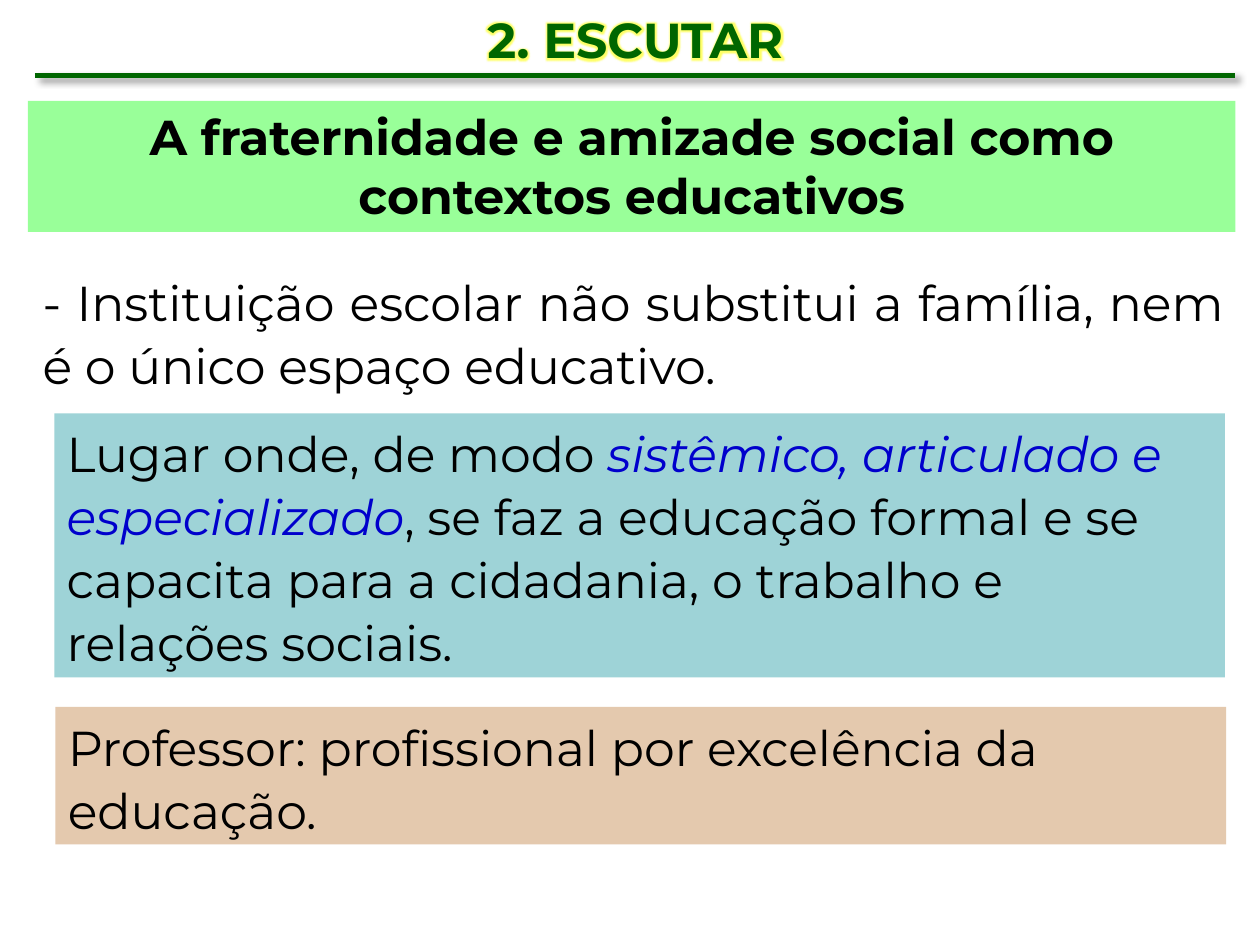
from lxml.etree import fromstring
from pptx import Presentation
from pptx.dml.color import RGBColor
from pptx.enum.shapes import MSO_CONNECTOR as Connector, MSO_SHAPE as Shape
from pptx.enum.text import MSO_ANCHOR as Anchor, MSO_AUTO_SIZE as AutoSize, PP_ALIGN as Align
from pptx.util import Pt

DRAWING = "http://schemas.openxmlformats.org/drawingml/2006/main"
GREEN, BLACK, BLUE = "006600", "000000", "0000CC"


def color(value):
    return RGBColor.from_string(value)


def effects(content):
    return fromstring(f'<a:effectLst xmlns:a="{DRAWING}">{content}</a:effectLst>')


deck = Presentation()
deck.slide_width, deck.slide_height = Pt(720), Pt(540)
page = deck.slides.add_slide(deck.slide_layouts[6])

rule = page.shapes.add_connector(Connector.STRAIGHT, Pt(20), Pt(43.2), Pt(705.6), Pt(43.2))
rule.line.color.rgb = color(GREEN)
rule.line.width = Pt(3)
rule._element.spPr.append(effects(
    f'<a:outerShdw blurRad="{Pt(4)}" dist="{Pt(3)}" dir="2700000" algn="tl" rotWithShape="0">'
    '<a:srgbClr val="000000"><a:alpha val="40000"/></a:srgbClr></a:outerShdw>'))

blocks = [
    ((20, 3.6, 686, 37.4), None, Align.CENTER, True,
     [("2. ESCUTAR", GREEN, False)]),
    ((17.3, 149.8, 689, 78.5), None, Align.JUSTIFY, False,
     [("- Instituição escolar não substitui a família, nem é o único espaço educativo.", BLACK, False)]),
    ((16, 57.6, 690, 75), "99FF99", Align.CENTER, True,
     [("A fraternidade e amizade social como contextos educativos", BLACK, False)]),
    ((31, 236.2, 669, 151), "9ED3D7", Align.LEFT, False,
     [("Lugar onde, de modo ", BLACK, False),
      ("sistêmico, articulado e especializado", BLUE, True),
      (", se faz a educação formal e se capacita para a cidadania, o trabalho e relações sociais.", BLACK, False)]),
    ((31.7, 404, 669, 78.5), "E4C9AE", Align.LEFT, False,
     [("Professor: profissional por excelência da educação.", BLACK, False)]),
]

for place, fill, align, bold, spans in blocks:
    bounds = [Pt(length) for length in place]
    if fill:
        box = page.shapes.add_shape(Shape.RECTANGLE, *bounds)
        box.shadow.inherit = False
        box.fill.solid()
        box.fill.fore_color.rgb = color(fill)
        box.line.fill.background()
    else:
        box = page.shapes.add_textbox(*bounds)
    is_title = spans[0][1] == GREEN
    frame = box.text_frame
    frame.word_wrap = True
    frame.auto_size = AutoSize.NONE if is_title else AutoSize.SHAPE_TO_FIT_TEXT
    frame.vertical_anchor = Anchor.MIDDLE if is_title else Anchor.TOP
    para = frame.paragraphs[0]
    para.alignment = align
    if not bold:
        para.line_spacing = 1.07
        para.space_after = Pt(8)
    for text, ink, italic in spans:
        span = para.add_run()
        span.text = text
        span.font.name = "Montserrat"
        span.font.size = Pt(28)
        span.font.bold = bold
        span.font.italic = italic
        span.font.color.rgb = color(ink)
        if is_title:
            span.font._element.find(f"{{{DRAWING}}}solidFill").addnext(effects(
                f'<a:glow rad="{Pt(5)}"><a:srgbClr val="FFFF66"/></a:glow>'))

deck.save("out.pptx")
